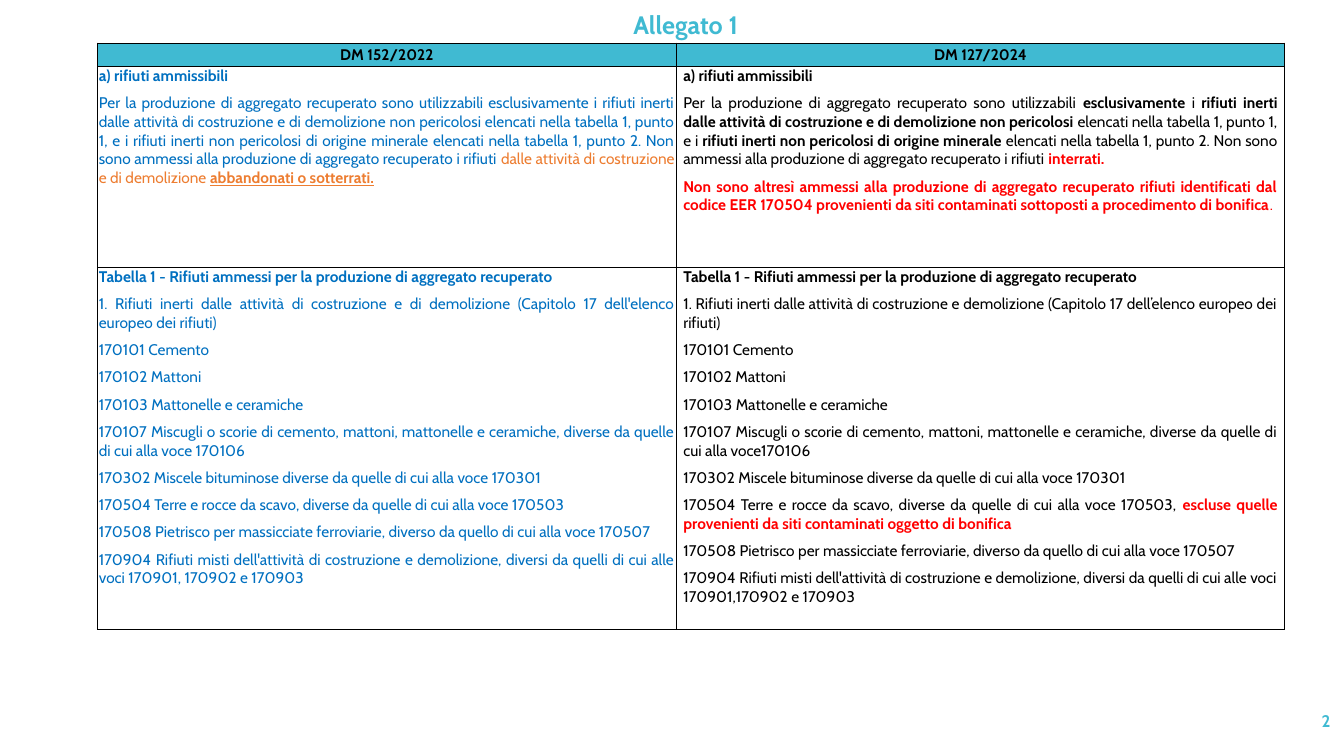
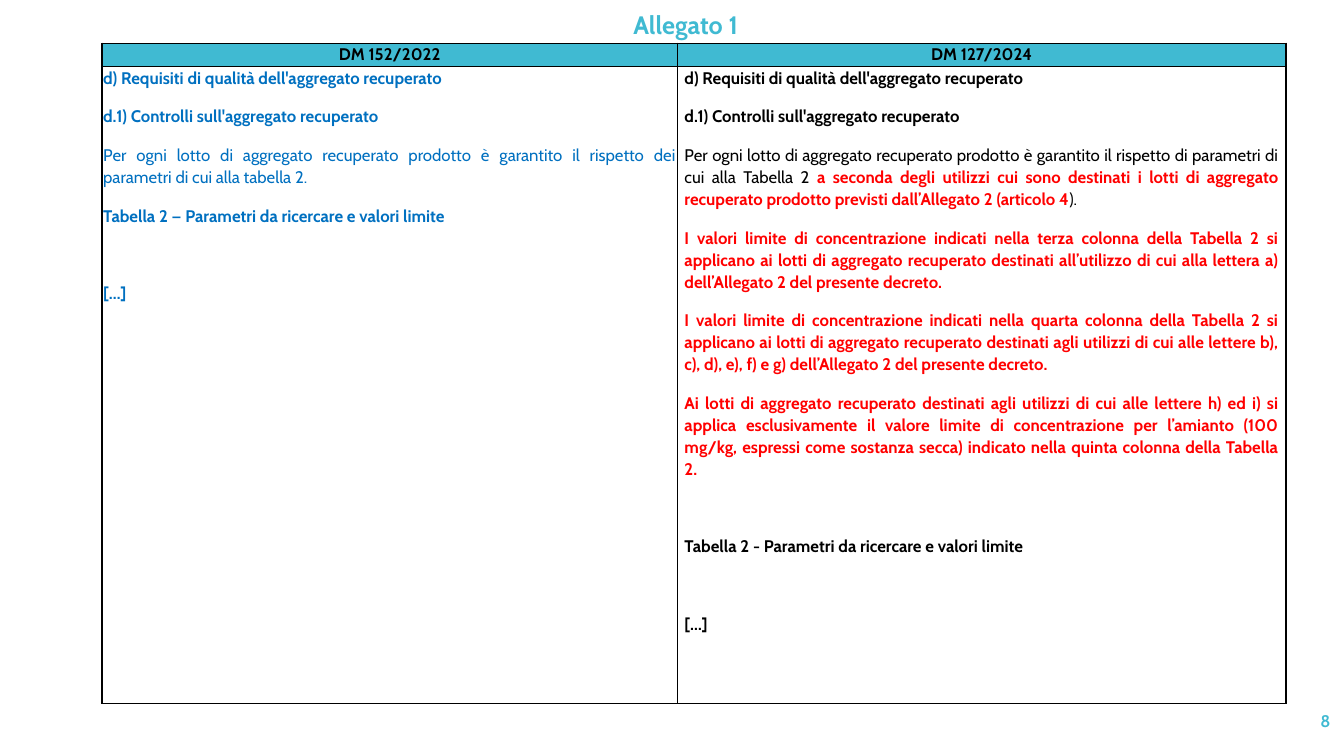
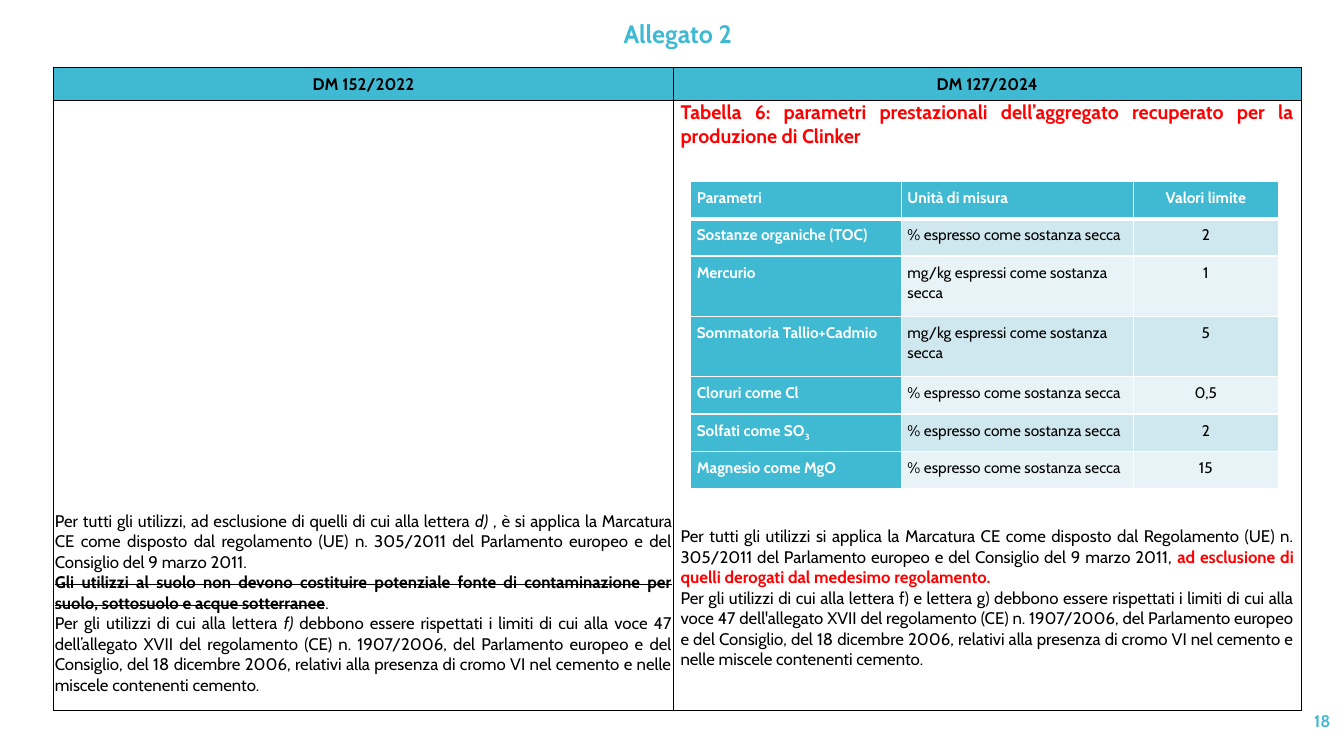
from dataclasses import dataclass

from lxml.etree import SubElement
from pptx import Presentation
from pptx.dml.color import RGBColor
from pptx.enum.text import MSO_ANCHOR, MSO_AUTO_SIZE, PP_ALIGN
from pptx.oxml.ns import qn
from pptx.util import Cm, Pt

COLOURS = {
    "teal": "40BAD2",
    "blue": "0070C0",
    "orange": "ED7D31",
    "red": "FF0000",
    "black": "000000",
    "white": "FFFFFF",
    "band_dark": "CFE7EE",
    "band_light": "E8F3F7",
}
FONT = "Cabin"
DECREES = ("DM 152/2022", "DM 127/2024")
HEADER_INSETS = ((0, 0), (0.13, 0))
BODY_INSETS = ((0.03, 0), (0.18, 0))


@dataclass
class Style:
    """Text settings shared by the paragraphs of a cell or box."""
    size: float = 12
    look: str = "black"
    align: PP_ALIGN = PP_ALIGN.JUSTIFY
    before: float = 0
    after: float = 0
    spacing: float = 1.0


@dataclass
class Passage:
    """A paragraph of (text, look) pieces with its own spacing or size."""
    pieces: list
    before: float = None
    size: float = None


def rgb(name):
    """Return the named colour."""
    return RGBColor.from_string(COLOURS[name])


def format_run(run, look, size):
    """Apply a look such as 'bold red' to a run."""
    font = run.font
    font.name, font.size = FONT, Pt(size)
    font.bold = font.italic = False
    for word in look.split():
        if word in COLOURS:
            font.color.rgb = rgb(word)
        elif word == "strike":
            run._r.get_or_add_rPr().set("strike", "sngStrike")
        elif word == "subscript":
            run._r.get_or_add_rPr().set("baseline", "-25000")
        else:
            setattr(font, word, True)


def write(frame, passages, style):
    """Fill a text frame with passages, plain strings or piece lists."""
    for index, passage in enumerate(passages):
        if not isinstance(passage, Passage):
            passage = Passage(passage)
        pieces = passage.pieces
        if isinstance(pieces, str):
            pieces = [(pieces, "")]
        paragraph = frame.add_paragraph() if index else frame.paragraphs[0]
        paragraph.alignment = style.align
        paragraph.line_spacing = style.spacing
        before = style.before if passage.before is None else passage.before
        paragraph.space_before = Pt(before)
        paragraph.space_after = Pt(style.after)
        for text, look in pieces:
            run = paragraph.add_run()
            run.text = text
            format_run(run, f"{style.look} {look}", passage.size or style.size)


def set_borders(cell, colour, bottom=1):
    """Draw solid lines on the four sides of a cell."""
    properties = cell._tc.get_or_add_tcPr()
    for side, width in (("L", 1), ("R", 1), ("T", 1), ("B", bottom)):
        line = SubElement(properties, qn(f"a:ln{side}"), w=str(Pt(width)))
        paint = SubElement(line, qn("a:solidFill"))
        SubElement(paint, qn("a:srgbClr"), val=COLOURS[colour])


def fill_cell(cell, passages, style, insets, fill=None, line="black", bottom=1,
              anchor=MSO_ANCHOR.TOP):
    """Write a cell and set its margins, borders and fill."""
    across, down = insets
    cell.margin_left = cell.margin_right = Cm(across)
    cell.margin_top = cell.margin_bottom = Cm(down)
    cell.vertical_anchor = anchor
    set_borders(cell, line, bottom)
    if fill:
        cell.fill.solid()
        cell.fill.fore_color.rgb = rgb(fill)
    else:
        cell.fill.background()
    write(cell.text_frame, passages, style)


def add_grid(slide, left, top, widths, heights):
    """Add an unbanded table with the given column and row sizes in cm."""
    table = slide.shapes.add_table(
        len(heights), len(widths), Cm(left), Cm(top),
        Cm(sum(widths)), Cm(sum(heights))).table
    table.first_row = table.horz_banding = False
    for column, width in zip(table.columns, widths):
        column.width = Cm(width)
    for row, height in zip(table.rows, heights):
        row.height = Cm(height)
    return table


def add_comparison(slide, left, top, widths, heights, header_size):
    """Add the table that sets the two decrees side by side."""
    table = add_grid(slide, left, top, widths, heights)
    header = Style(header_size, "bold black", PP_ALIGN.CENTER)
    for column, decree in enumerate(DECREES):
        fill_cell(table.cell(0, column), [decree], header,
                  HEADER_INSETS[column], "teal", anchor=MSO_ANCHOR.MIDDLE)
    return table


def add_slide(deck, title, number, left=8.81, top=0):
    """Add a slide with its annex title and page number."""
    slide = deck.slides.add_slide(deck.slide_layouts[5])
    heading = slide.shapes.title
    heading.left, heading.top = Cm(left), Cm(top)
    heading.width, heading.height = Cm(16.94), Cm(1.09)
    frame = heading.text_frame
    frame.word_wrap = True
    frame.auto_size = MSO_AUTO_SIZE.SHAPE_TO_FIT_TEXT
    frame.vertical_anchor = MSO_ANCHOR.TOP
    write(frame, [title],
          Style(18, "bold teal", PP_ALIGN.CENTER, 6, 6, 1.15))
    page = slide.shapes.add_textbox(Cm(29.54), Cm(17.65), Cm(4.24), Cm(1.02))
    page.text_frame.word_wrap = True
    page.text_frame.vertical_anchor = MSO_ANCHOR.MIDDLE
    write(page.text_frame, [str(number)],
          Style(12, "bold teal", PP_ALIGN.RIGHT))
    return slide


def build_admissible_waste(deck):
    """Build the comparison of admissible waste."""
    slide = add_slide(deck, "Allegato 1", 2)
    table = add_comparison(slide, 2.46, 1.09, (14.58, 15.34),
                           (0.58, 5.07, 9.12), 11)
    heading = [("a) rifiuti ammissibili", "bold")]
    list_heading = [("Tabella 1 - Rifiuti ammessi per la produzione di "
                     "aggregato recuperato", "bold")]
    basics = ["170101 Cemento", "170102 Mattoni",
              "170103 Mattonelle e ceramiche"]
    mixtures = ("170107 Miscugli o scorie di cemento, mattoni, mattonelle e "
                "ceramiche, diverse da quelle di cui alla voce")
    bitumen = ("170302 Miscele bituminose diverse da quelle di cui alla voce "
               "170301")
    soil = ("170504 Terre e rocce da scavo, diverse da quelle di cui alla "
            "voce 170503")
    ballast = ("170508 Pietrisco per massicciate ferroviarie, diverso da "
               "quello di cui alla voce 170507")
    mixed = ("170904 Rifiuti misti dell'attività di costruzione e "
             "demolizione, diversi da quelli di cui alle voci ")
    rows = [
        ([heading,
          [("Per la produzione di aggregato recuperato sono utilizzabili "
            "esclusivamente i rifiuti inerti dalle attività di costruzione e "
            "di demolizione non pericolosi elencati nella tabella 1, punto 1, "
            "e i rifiuti inerti non pericolosi di origine minerale elencati "
            "nella tabella 1, punto 2. Non sono ammessi alla produzione di "
            "aggregato recuperato i rifiuti ", ""),
           ("dalle attività di costruzione e di demolizione ", "orange"),
           ("abbandonati o sotterrati.", "bold underline orange")]],
         [heading,
          [("Per la produzione di aggregato recuperato sono utilizzabili ",
            ""),
           ("esclusivamente", "bold"),
           (" i ", ""),
           ("rifiuti inerti dalle attività di costruzione e di demolizione "
            "non pericolosi", "bold"),
           (" elencati nella tabella 1, punto 1, e i ", ""),
           ("rifiuti inerti non pericolosi di origine minerale ", "bold"),
           ("elencati nella tabella 1, punto 2. Non sono ammessi alla "
            "produzione di aggregato recuperato i rifiuti ", ""),
           ("interrati.", "bold red")],
          [("Non sono altresì ammessi alla produzione di aggregato recuperato "
            "rifiuti identificati dal codice EER 170504 provenienti da siti "
            "contaminati sottoposti a procedimento di bonifica", "bold red"),
           (".", "red")]]),
        ([list_heading,
          "1. Rifiuti inerti dalle attività di costruzione e di demolizione "
          "(Capitolo 17 dell'elenco europeo dei rifiuti)",
          *basics, mixtures + " 170106", bitumen, soil, ballast,
          mixed + "170901, 170902 e 170903"],
         [list_heading,
          "1. Rifiuti inerti dalle attività di costruzione e demolizione "
          "(Capitolo 17 dell’elenco europeo dei rifiuti)",
          *basics, mixtures + "170106", bitumen,
          [(soil + ", ", ""),
           ("escluse quelle provenienti da siti contaminati oggetto di "
            "bonifica ", "bold red")],
          ballast, mixed + "170901,170902 e 170903"]),
    ]
    for row, texts in enumerate(rows, 1):
        for column, look in enumerate(("blue", "black")):
            fill_cell(table.cell(row, column), texts[column],
                      Style(11, look, after=6), BODY_INSETS[column])


def build_quality_requirements(deck):
    """Build the comparison of quality requirements."""
    slide = add_slide(deck, "Allegato 1", 8)
    table = add_comparison(slide, 2.57, 1.09, (14.5, 15.34),
                           (0.58, 16.05), 12)
    headings = [
        [("d) Requisiti di qualità dell'aggregato recuperato", "bold")],
        [("d.1) Controlli sull'aggregato recuperato", "bold")],
    ]
    omission = Passage([("[…]", "bold")], before=33.7)
    limits = [
        "I valori limite di concentrazione indicati nella terza colonna della "
        "Tabella 2 si applicano ai lotti di aggregato recuperato destinati "
        "all’utilizzo di cui alla lettera a) dell’Allegato 2 del presente "
        "decreto.",
        "I valori limite di concentrazione indicati nella quarta colonna "
        "della Tabella 2 si applicano ai lotti di aggregato recuperato "
        "destinati agli utilizzi di cui alle lettere b), c), d), e), f) e g) "
        "dell’Allegato 2 del presente decreto.",
        "Ai lotti di aggregato recuperato destinati agli utilizzi di cui alle "
        "lettere h) ed i) si applica esclusivamente il valore limite di "
        "concentrazione per l’amianto (100 mg/kg, espressi come sostanza "
        "secca) indicato nella quinta colonna della Tabella 2.",
    ]
    previous = [
        *headings,
        "Per ogni lotto di aggregato recuperato prodotto è garantito il "
        "rispetto dei parametri di cui alla tabella 2.",
        [("Tabella 2 — Parametri da ricercare e valori limite", "bold")],
        omission,
    ]
    current = [
        *headings,
        [("Per ogni lotto di aggregato recuperato prodotto è garantito il "
          "rispetto di parametri di cui alla Tabella 2 ", ""),
         ("a seconda degli utilizzi cui sono destinati i lotti di aggregato "
          "recuperato prodotto previsti dall’Allegato 2 (articolo 4",
          "bold red"),
         (").", "")],
        *([(limit, "bold red")] for limit in limits),
        Passage([("Tabella 2 - Parametri da ricercare e valori limite",
                  "bold")], before=33.7),
        omission,
    ]
    for column, (look, passages) in enumerate(
            (("blue", previous), ("black", current))):
        fill_cell(table.cell(1, column), passages,
                  Style(12, look, before=6, after=6, spacing=1.07),
                  BODY_INSETS[column])


def add_clinker_parameters(slide):
    """Add the table of performance limits for clinker."""
    dry = "% espresso come sostanza secca"
    dry_weight = "mg/kg espressi come sostanza secca"
    rows = [
        ("Parametri", "Unità di misura", "Valori limite"),
        ("Sostanze organiche (TOC)", dry, "2"),
        ("Mercurio", dry_weight, "1"),
        ("Sommatoria Tallio+Cadmio", dry_weight, "5"),
        ("Cloruri come Cl", dry, "0,5"),
        ([("Solfati come SO", ""), ("3", "subscript")], dry, "2"),
        ("Magnesio come MgO", dry, "15"),
    ]
    heights = [1.52 if unit == dry_weight else 0.94 for _, unit, _ in rows]
    table = add_grid(slide, 17.41, 4.57, (5.31, 5.84, 3.66), heights)
    for row, entries in enumerate(rows):
        band = "band_dark" if row % 2 else "band_light"
        for column, entry in enumerate(entries):
            heading = row == 0 or column == 0
            align = PP_ALIGN.CENTER if column == 2 else PP_ALIGN.LEFT
            style = Style(11, "bold white" if heading else "black", align,
                          spacing=1.07)
            fill_cell(table.cell(row, column), [entry], style, (0.15, 0.15),
                      "teal" if heading else band, "white",
                      bottom=1 if row else 3)


def build_clinker_requirements(deck):
    """Build the comparison of uses and clinker requirements."""
    slide = add_slide(deck, "Allegato 2", 18, 8.61, 0.23)
    table = add_comparison(slide, 1.35, 1.7, (15.62, 15.82),
                           (0.84, 15.37), 12)
    chromium = ("debbono essere rispettati i limiti di cui alla voce 47 "
                "{}allegato XVII del regolamento (CE) n. 1907/2006, del "
                "Parlamento europeo e del Consiglio, del 18 dicembre 2006, "
                "relativi alla presenza di cromo VI nel cemento e nelle "
                "miscele contenenti cemento.")
    previous = [
        [("Per tutti gli utilizzi, ad esclusione di quelli di cui alla "
          "lettera ", ""),
         ("d) ", "italic"),
         (", è si applica la Marcatura CE come disposto dal regolamento (UE) "
          "n. 305/2011 del Parlamento europeo e del Consiglio del 9 marzo "
          "2011.", "")],
        [("Gli utilizzi al suolo non devono costituire potenziale fonte di "
          "contaminazione per suolo, sottosuolo e acque sotterranee",
          "bold strike"),
         (".", "")],
        [("Per gli utilizzi di cui alla lettera ", ""),
         ("f) ", "italic"),
         (chromium.format("dell’"), "")],
    ]
    current = [
        Passage([("Tabella 6: parametri prestazionali dell’aggregato "
                  "recuperato per la produzione di Clinker", "bold red")],
                size=14),
        Passage([("Per tutti gli utilizzi si applica la Marcatura CE come "
                  "disposto dal Regolamento (UE) n. 305/2011 del Parlamento "
                  "europeo e del Consiglio del 9 marzo 2011, ", ""),
                 ("ad esclusione di quelli derogati dal medesimo "
                  "regolamento.", "bold red")], before=270),
        "Per gli utilizzi di cui alla lettera f) e lettera g) "
        + chromium.format("dell'"),
    ]
    for column, passages in enumerate((previous, current)):
        fill_cell(table.cell(1, column), passages, Style(),
                  BODY_INSETS[column])
    lower_text = table.cell(1, 0)
    lower_text.margin_top = Cm(10.33)
    add_clinker_parameters(slide)


def main():
    """Build and save the deck."""
    deck = Presentation()
    deck.slide_width, deck.slide_height = Cm(33.87), Cm(19.05)
    build_admissible_waste(deck)
    build_quality_requirements(deck)
    build_clinker_requirements(deck)
    deck.save("out.pptx")


if __name__ == "__main__":
    main()
